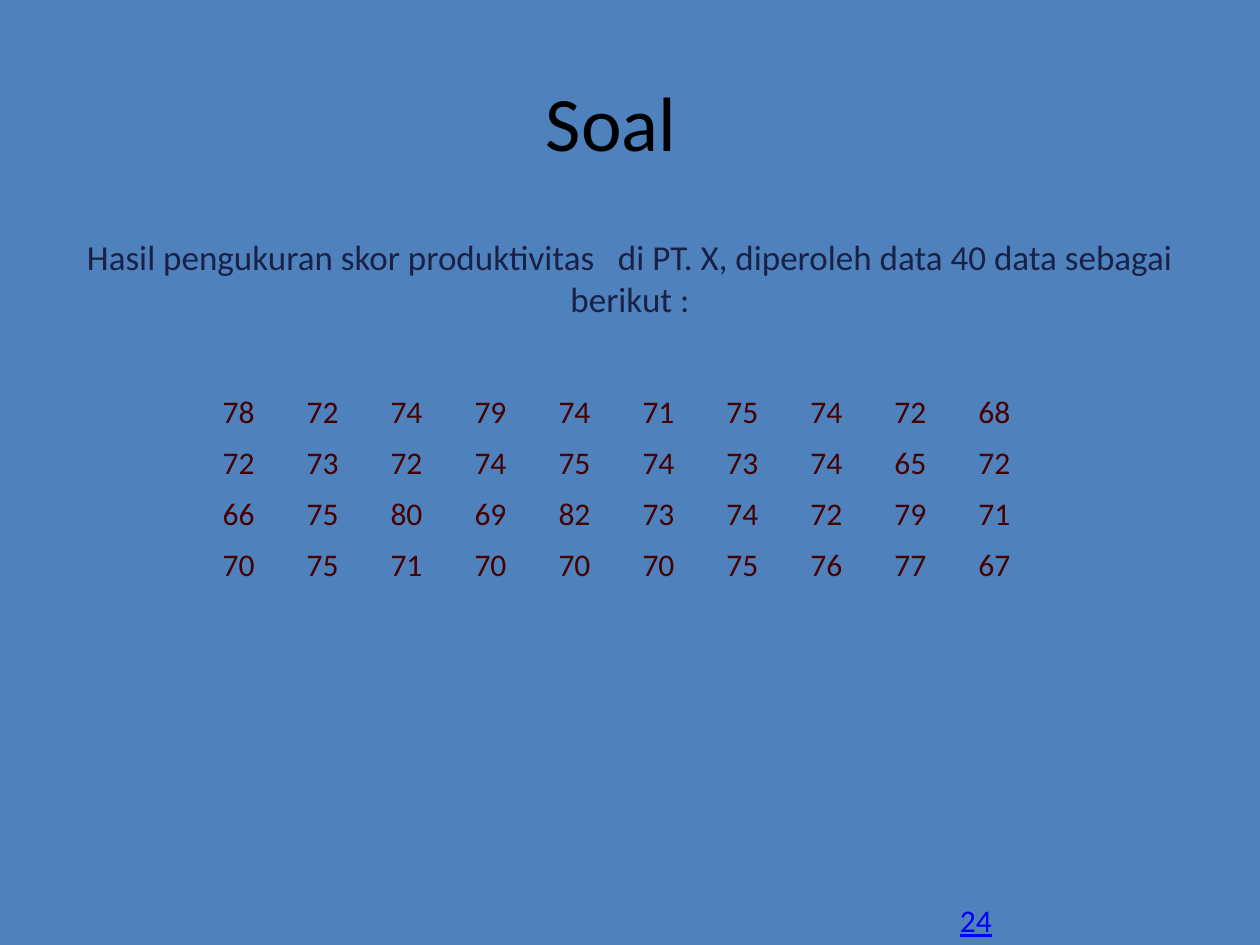
from pptx import Presentation
from pptx.dml.color import RGBColor
from pptx.enum.text import MSO_AUTO_SIZE, PP_ALIGN
from pptx.oxml.ns import qn
from pptx.util import Inches, Pt

CENTER = PP_ALIGN.CENTER
FONT = "Calibri"
PLAIN_TABLE_STYLE = "{2D5ABB26-0587-4C30-8999-92F81FD0307C}"
COLORS = {
    "background": "4F81BD",
    "title": "000000",
    "question": "1A2146",
    "scores": "460000",
    "number": "0000FF",
}

TITLE = "Soal "
QUESTION = (
    "Hasil pengukuran skor produktivitas   di PT. X, "
    "diperoleh data 40 data sebagai berikut :"
)
PAGE_NUMBER = "24"
SCORES = [
    [78, 72, 74, 79, 74, 71, 75, 74, 72, 68],
    [72, 73, 72, 74, 75, 74, 73, 74, 65, 72],
    [66, 75, 80, 69, 82, 73, 74, 72, 79, 71],
    [70, 75, 71, 70, 70, 70, 75, 76, 77, 67],
]


def write(holder, text, size, color, align=None):
    frame = holder.text_frame
    frame.text = text
    para = frame.paragraphs[0]
    para.alignment = align
    para.font.name = FONT
    para.font.size = Pt(size)
    para.font.color.rgb = RGBColor.from_string(COLORS[color])
    return para


def place(shape, left, top, width, height):
    shape.left, shape.top = Inches(left), Inches(top)
    shape.width, shape.height = Inches(width), Inches(height)


def add_scores(page):
    rows, columns = len(SCORES), len(SCORES[0])
    width = deck.slide_width * 2 // 3
    left = (deck.slide_width - width) // 2
    frame = page.shapes.add_table(
        rows, columns, left, Inches(3.07), width, Inches(1.62)
    )
    table = frame.table
    table.first_row = False
    table.horz_banding = False
    properties = frame._element.graphic.graphicData.tbl.tblPr
    properties.find(qn("a:tableStyleId")).text = PLAIN_TABLE_STYLE
    for row, scores in enumerate(SCORES):
        for column, score in enumerate(scores):
            cell = table.cell(row, column)
            cell.fill.background()
            write(cell, str(score), 18, "scores")


deck = Presentation()
deck.slide_width, deck.slide_height = Inches(10), Inches(7.5)
page = deck.slides.add_slide(deck.slide_layouts[1])
background = page.background.fill
background.solid()
background.fore_color.rgb = RGBColor.from_string(COLORS["background"])

number = page.shapes.add_textbox(
    Inches(7.52), Inches(7.1), Inches(0.46), Inches(0.4)
)
number.text_frame.word_wrap = False
number.text_frame.auto_size = MSO_AUTO_SIZE.SHAPE_TO_FIT_TEXT
write(number, PAGE_NUMBER, 18, "number").font.underline = True

title = page.shapes.title
place(title, 0.67, 0.33, 8.5, 1.25)
write(title, TITLE, 44, "title", CENTER)

body = page.placeholders[1]
place(body, 0.5, 1.82, 9, 0.92)
question = write(body, QUESTION, 20, "question", CENTER)
bullet = question._p.get_or_add_pPr()
bullet.set("marL", "0")
bullet.set("indent", "0")
bullet.insert_element_before(
    bullet.makeelement(qn("a:buNone"), {}), "a:tabLst", "a:defRPr", "a:extLst"
)

add_scores(page)
deck.save("out.pptx")
